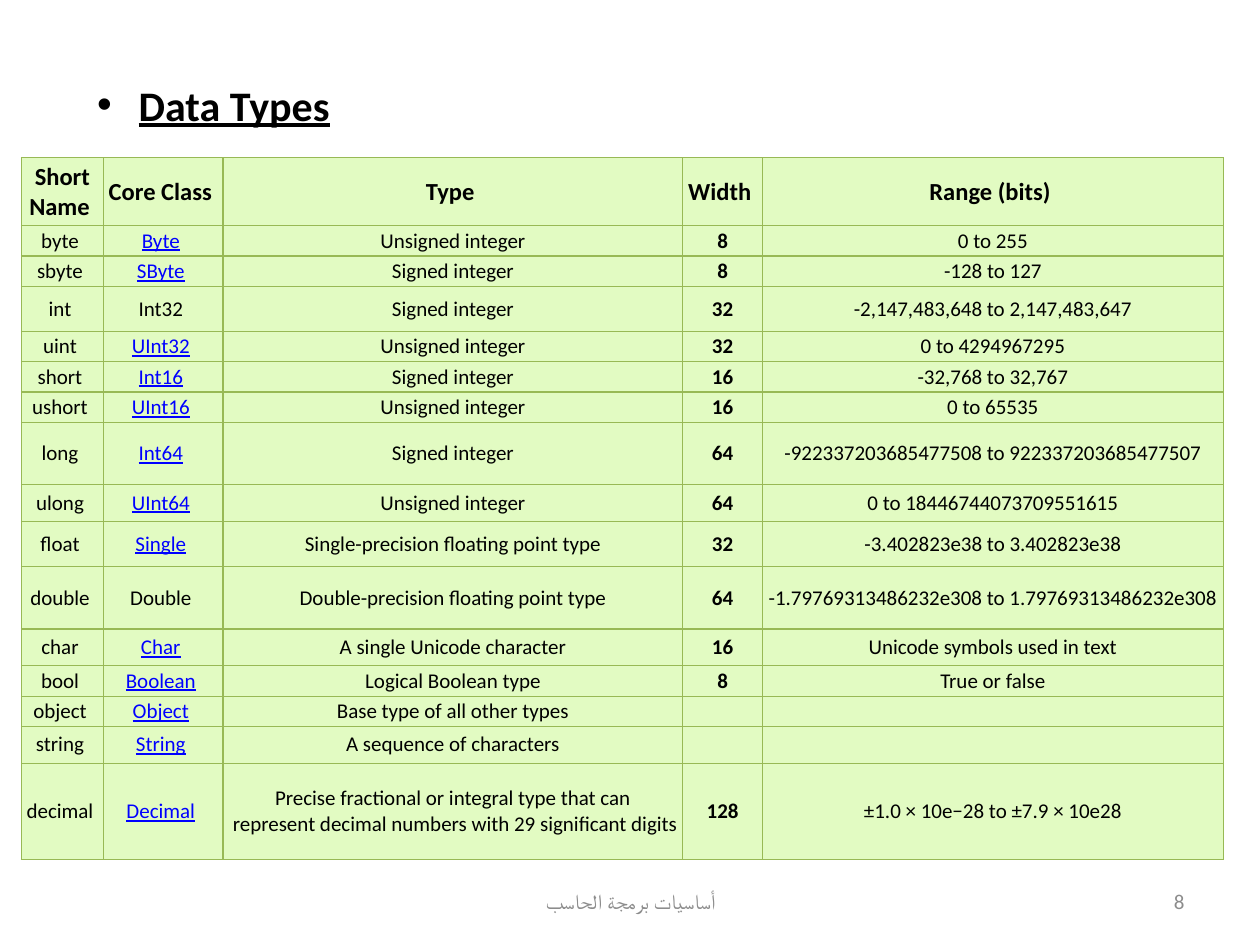
from typing import NamedTuple

from lxml import etree
from pptx import Presentation
from pptx import util as u
from pptx.dml.color import RGBColor
from pptx.enum import text as t
from pptx.oxml import ns

WIDE, HIGH = u.Inches(10), u.Inches(7.5)
FONT, INK, LINK, GREY = "Calibri", "000000", "0000FF", "8C8C8C"
FILL, EDGE = "E2FBC2", "98B955"
COLS = [6.5, 9.5, 36.5, 6.3, 36.6]
MID, LEFT, RIGHT = t.PP_ALIGN.CENTER, t.PP_ALIGN.LEFT, t.PP_ALIGN.RIGHT


class Box(NamedTuple):
    """A place on the slide, in percent of its width and height."""
    x: float
    y: float
    w: float
    h: float


class Row(NamedTuple):
    """One data type, with its row height in percent of the slide."""
    high: float
    name: str
    kind: str
    note: str
    bits: str
    span: str
    link: bool = True


class Foot(NamedTuple):
    """A line of text at the foot of the slide."""
    box: Box
    words: str
    side: t.PP_ALIGN


HEAD = Row(7.2, "Short\nName ", "Core Class ", "Type ", "Width ", "Range (bits) ", False)
ROWS = [
    Row(3.2, "byte ", "Byte ", "Unsigned integer", "8", "0 to 255"),
    Row(3.2, "sbyte ", "SByte ", "Signed integer", "8", "-128 to 127"),
    Row(4.8, "int ", "Int32 ", "Signed integer", "32", "-2,147,483,648 to 2,147,483,647", False),
    Row(3.2, "uint ", "UInt32 ", "Unsigned integer", "32", "0 to 4294967295"),
    Row(3.2, "short ", "Int16 ", "Signed integer", "16", "-32,768 to 32,767"),
    Row(3.2, "ushort ", "UInt16 ", "Unsigned integer", "16", "0 to 65535"),
    Row(6.6, "long ", "Int64 ", "Signed integer", "64",
        "-922337203685477508 to 922337203685477507"),
    Row(3.9, "ulong ", "UInt64 ", "Unsigned integer", "64", "0 to 18446744073709551615"),
    Row(4.8, "float ", "Single ", "Single-precision floating point type", "32",
        "-3.402823e38 to 3.402823e38"),
    Row(6.6, "double ", "Double ", "Double-precision floating point type", "64",
        "-1.79769313486232e308 to 1.79769313486232e308", False),
    Row(3.9, "char ", "Char ", "A single Unicode character", "16", "Unicode symbols used in text"),
    Row(3.2, "bool ", "Boolean ", "Logical Boolean type", "8", "True or false"),
    Row(3.2, "object ", "Object ", "Base type of all other types", "", ""),
    Row(3.9, "string ", "String ", "A sequence of characters", "", ""),
    Row(10.25, "decimal ", "Decimal ",
        "Precise fractional or integral type that can\n"
        " represent decimal numbers with 29 significant digits",
        "128", "±1.0 × 10e−28 to ±7.9 × 10e28"),
]
FEET = [
    Foot(Box(34.2, 92.7, 31.7, 5.3), "أساسيات برمجة الحاسب", MID),
    Foot(Box(71.7, 92.7, 23.3, 5.3), "8", RIGHT),
]


def across(part: float) -> int:
    """Turn a percentage of the slide's width into a length."""
    return int(WIDE * part / 100)


def down(part: float) -> int:
    """Turn a percentage of the slide's height into a length."""
    return int(HIGH * part / 100)


def place(box: Box) -> tuple:
    """Give left, top, width and height as lengths."""
    return across(box.x), down(box.y), across(box.w), down(box.h)


def paint(hue: str) -> RGBColor:
    """Turn a hex string into a colour."""
    return RGBColor.from_string(hue)


def write(frame, words: str, size: float = 12, bold: bool = False, hue: str = INK,
          side: t.PP_ALIGN = MID, link: bool = False) -> None:
    """Fill a text frame, one paragraph to a line; a link's last space stays plain."""
    for n, line in enumerate(words.split("\n")):
        para = frame.paragraphs[0] if n == 0 else frame.add_paragraph()
        para.alignment = side
        if not line:
            para._p.get_or_add_endParaRPr().set("sz", str(size * 100))
            continue
        core = line.rstrip() if link else line
        for part, mark in ((core, link), (line[len(core):], False)):
            if part:
                run = para.add_run()
                run.text = part
                font = run.font
                font.name, font.size, font.bold = FONT, u.Pt(size), bold
                font.underline = mark
                font.color.rgb = paint(LINK if mark and hue == INK else hue)


def edge(cell) -> None:
    """Draw thin lines on all four sides of a cell."""
    props = cell._tc.get_or_add_tcPr()
    for n, side in enumerate(("lnL", "lnR", "lnT", "lnB")):
        line = etree.Element(ns.qn("a:" + side), w=str(u.Pt(0.75)))
        fill = etree.SubElement(line, ns.qn("a:solidFill"))
        etree.SubElement(fill, ns.qn("a:srgbClr"), val=EDGE)
        props.insert(n, line)


def title(slide) -> None:
    """Set the bulleted, underlined heading."""
    shape = slide.shapes.title
    shape.left, shape.top, shape.width, shape.height = place(Box(6.7, 7.7, 20.8, 6.7))
    frame = shape.text_frame
    frame.word_wrap = False
    frame.auto_size = t.MSO_AUTO_SIZE.NONE
    frame.vertical_anchor = t.MSO_ANCHOR.TOP
    write(frame, "Data Types", size=24, bold=True, side=LEFT)
    para = frame.paragraphs[0]
    para.runs[0].font.underline = True
    props = para._p.get_or_add_pPr()
    props.set("marL", str(across(3.3)))
    props.set("indent", str(-across(3.3)))
    etree.SubElement(props, ns.qn("a:buFont"), typeface="Arial")
    etree.SubElement(props, ns.qn("a:buChar"), char="•")


def table(slide) -> None:
    """Lay out the table of data types."""
    rows = [HEAD, *ROWS]
    box = Box(1.7, 16.7, sum(COLS), sum(row.high for row in rows))
    grid = slide.shapes.add_table(len(rows), len(COLS), *place(box)).table
    grid.first_row = grid.horz_banding = False
    for col, wide in zip(grid.columns, COLS):
        col.width = across(wide)
    for r, row in enumerate(rows):
        grid.rows[r].height = down(row.high)
        head = row is HEAD
        for c, words in enumerate(row[1:6]):
            cell = grid.cell(r, c)
            cell.margin_left = cell.margin_right = u.Inches(0.02)
            cell.margin_top = cell.margin_bottom = u.Inches(0.01)
            cell.vertical_anchor = t.MSO_ANCHOR.MIDDLE
            cell.fill.solid()
            cell.fill.fore_color.rgb = paint(FILL)
            edge(cell)
            write(cell.text_frame, words, size=14 if head else 12,
                  bold=head or c == 3, link=row.link and c == 1)


def foot(slide, item: Foot) -> None:
    """Add one line of the footer."""
    frame = slide.shapes.add_textbox(*place(item.box)).text_frame
    frame.word_wrap = True
    frame.vertical_anchor = t.MSO_ANCHOR.MIDDLE
    write(frame, item.words, hue=GREY, side=item.side)


def main() -> None:
    """Build the slide and save it."""
    deck = Presentation()
    deck.slide_width, deck.slide_height = WIDE, HIGH
    slide = deck.slides.add_slide(deck.slide_layouts[5])
    for item in FEET:
        foot(slide, item)
    table(slide)
    title(slide)
    deck.save("out.pptx")


if __name__ == "__main__":
    main()
